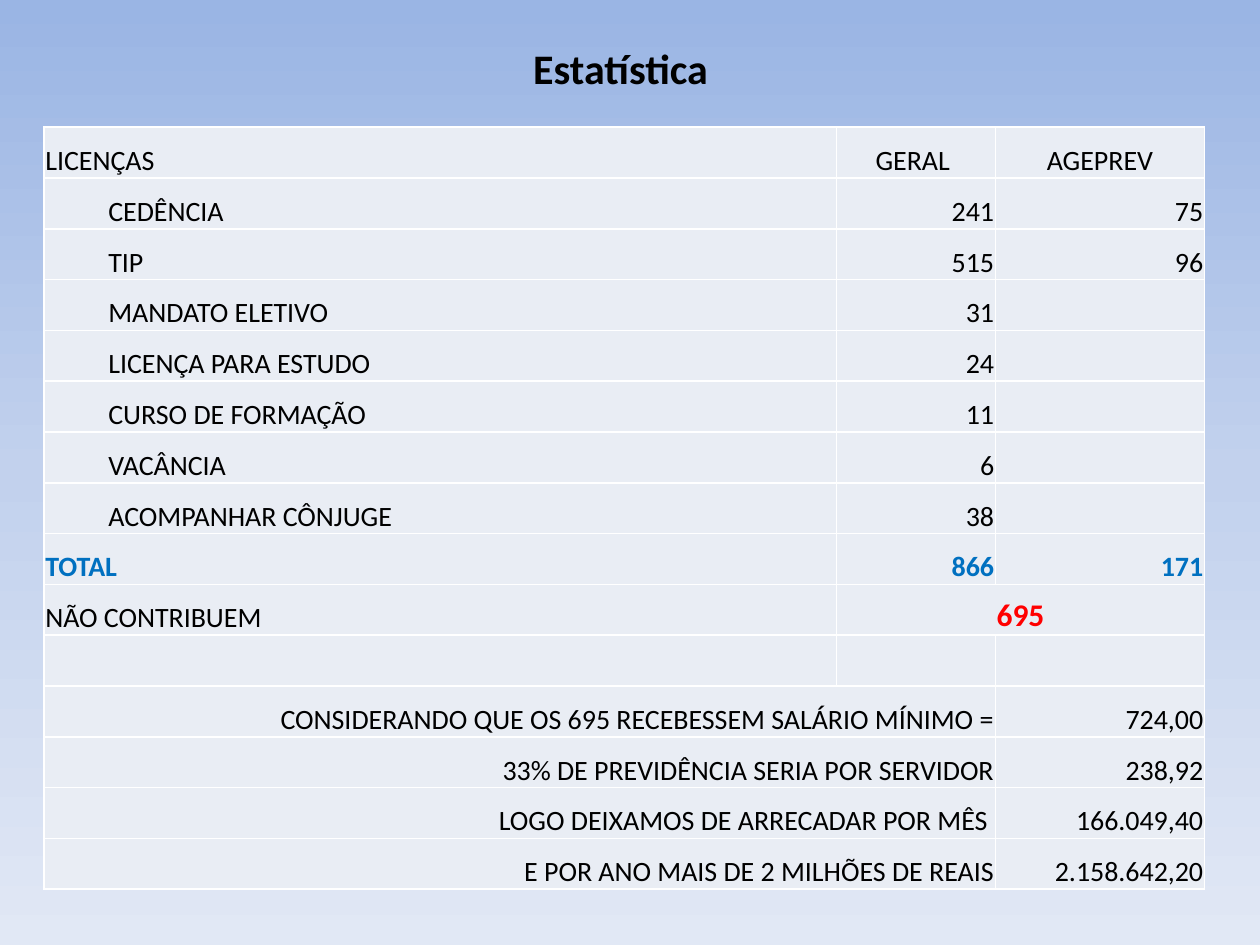
import copy
from dataclasses import dataclass

import pptx
import pptx.dml.color
import pptx.enum.text
import pptx.oxml.ns
import pptx.util
from lxml import etree

Pt = pptx.util.Pt
RGBColor = pptx.dml.color.RGBColor
Align = pptx.enum.text.PP_ALIGN
Anchor = pptx.enum.text.MSO_ANCHOR
qn = pptx.oxml.ns.qn

BLACK = RGBColor(0x00, 0x00, 0x00)
WHITE = RGBColor(0xFF, 0xFF, 0xFF)
BLUE = RGBColor(0x00, 0x70, 0xC0)
RED = RGBColor(0xFF, 0x00, 0x00)
PALE = RGBColor(0xE9, 0xED, 0xF4)
SKY = [(0, RGBColor(0x9A, 0xB5, 0xE4)),
       (0.5, RGBColor(0xC2, 0xD1, 0xED)),
       (1, RGBColor(0xE1, 0xE8, 0xF5))]

FONT = "Calibri"
COLS = [452.88, 90.72, 119.52]
ROW = 29.04


@dataclass
class Entry:
    text: str
    align: Align = Align.RIGHT
    color: RGBColor = BLACK
    size: float = 16
    bold: bool = False
    indent: float = 0
    span: int = 1


def left(text: str, **style) -> Entry:
    return Entry(text, Align.LEFT, **style)


def item(name: str, total: str, part: str = "") -> list[Entry]:
    return [left(name, indent=36), Entry(total), Entry(part)]


def claim(text: str, value: str) -> list[Entry]:
    return [Entry(text, span=2), Entry(value)]


ROWS = [
    [left("LICENÇAS"), Entry("GERAL ", Align.CENTER), Entry("AGEPREV", Align.CENTER)],
    item("CEDÊNCIA", "241", "75"),
    item("TIP", "515", "96"),
    item("MANDATO ELETIVO", "31"),
    item("LICENÇA PARA ESTUDO", "24"),
    item("CURSO DE FORMAÇÃO", "11"),
    item("VACÂNCIA", "6"),
    item("ACOMPANHAR CÔNJUGE", "38"),
    [left("TOTAL", color=BLUE, bold=True),
     Entry("866", color=BLUE, bold=True), Entry("171", color=BLUE, bold=True)],
    [left("NÃO CONTRIBUEM"),
     Entry("695", Align.CENTER, RED, 18, True, span=2)],
    [left(""), Entry(""), Entry("")],
    claim("CONSIDERANDO QUE OS 695 RECEBESSEM SALÁRIO MÍNIMO =", "724,00"),
    claim("33% DE PREVIDÊNCIA SERIA POR SERVIDOR", "238,92"),
    claim("LOGO DEIXAMOS DE ARRECADAR POR MÊS ", "166.049,40"),
    claim("E POR ANO MAIS DE 2 MILHÕES DE REAIS", "2.158.642,20"),
]


def write(frame, entry: Entry) -> None:
    """Put the text of one entry into a frame and format it."""
    para = frame.paragraphs[0]
    para.text = entry.text
    para.alignment = entry.align
    if entry.indent:
        para.level = 1
        props = para._p.get_or_add_pPr()
        props.set("marL", str(Pt(entry.indent)))
        props.set("indent", "0")
    for run in para.runs:
        run.font.name = FONT
        run.font.size = Pt(entry.size)
        run.font.bold = entry.bold
        run.font.color.rgb = entry.color


def edge(cell) -> None:
    """Draw a thin white line on each side of a cell."""
    props = cell._tc.get_or_add_tcPr()
    for spot, side in enumerate(("a:lnL", "a:lnR", "a:lnT", "a:lnB")):
        line = etree.Element(qn(side), w=str(Pt(1)))
        fill = etree.SubElement(line, qn("a:solidFill"))
        etree.SubElement(fill, qn("a:srgbClr"), val=str(WHITE))
        props.insert(spot, line)


def paint(slide) -> None:
    """Fill the background from top to bottom in three steps."""
    fill = slide.background.fill
    fill.gradient()
    fill.gradient_angle = 270
    first = slide.background._cSld.find(".//" + qn("a:gs"))
    first.addnext(copy.deepcopy(first))
    for stop, (place, color) in zip(fill.gradient_stops, SKY):
        stop.position = place
        stop.color.rgb = color


def grid(slide) -> None:
    """Build the table of leaves and lost income."""
    frame = slide.shapes.add_table(len(ROWS), len(COLS), Pt(25.2), Pt(72.72),
                                   Pt(sum(COLS)), Pt(ROW * len(ROWS)))
    table = frame.table
    table.first_row = False
    table.horz_banding = False
    for col, width in zip(table.columns, COLS):
        col.width = Pt(width)
    for row in table.rows:
        row.height = Pt(ROW)

    for cell in table.iter_cells():
        cell.fill.solid()
        cell.fill.fore_color.rgb = PALE
        cell.vertical_anchor = Anchor.BOTTOM
        cell.margin_left = cell.margin_right = cell.margin_top = Pt(0.72)
        cell.margin_bottom = 0
        edge(cell)

    for y, row in enumerate(ROWS):
        x = 0
        for entry in row:
            cell = table.cell(y, x)
            if entry.span > 1:
                cell.merge(table.cell(y, x + entry.span - 1))
            write(cell.text_frame, entry)
            x += entry.span


def main() -> None:
    deck = pptx.Presentation()
    deck.slide_width = Pt(720)
    deck.slide_height = Pt(540)
    slide = deck.slides.add_slide(deck.slide_layouts[6])
    paint(slide)

    # Title
    title = slide.shapes.add_textbox(Pt(99.36), Pt(20.88), Pt(510.48), Pt(36))
    title.text_frame.word_wrap = True
    write(title.text_frame, Entry("Estatística", Align.CENTER, size=24, bold=True))

    # Table
    grid(slide)
    deck.save("out.pptx")


if __name__ == "__main__":
    main()
